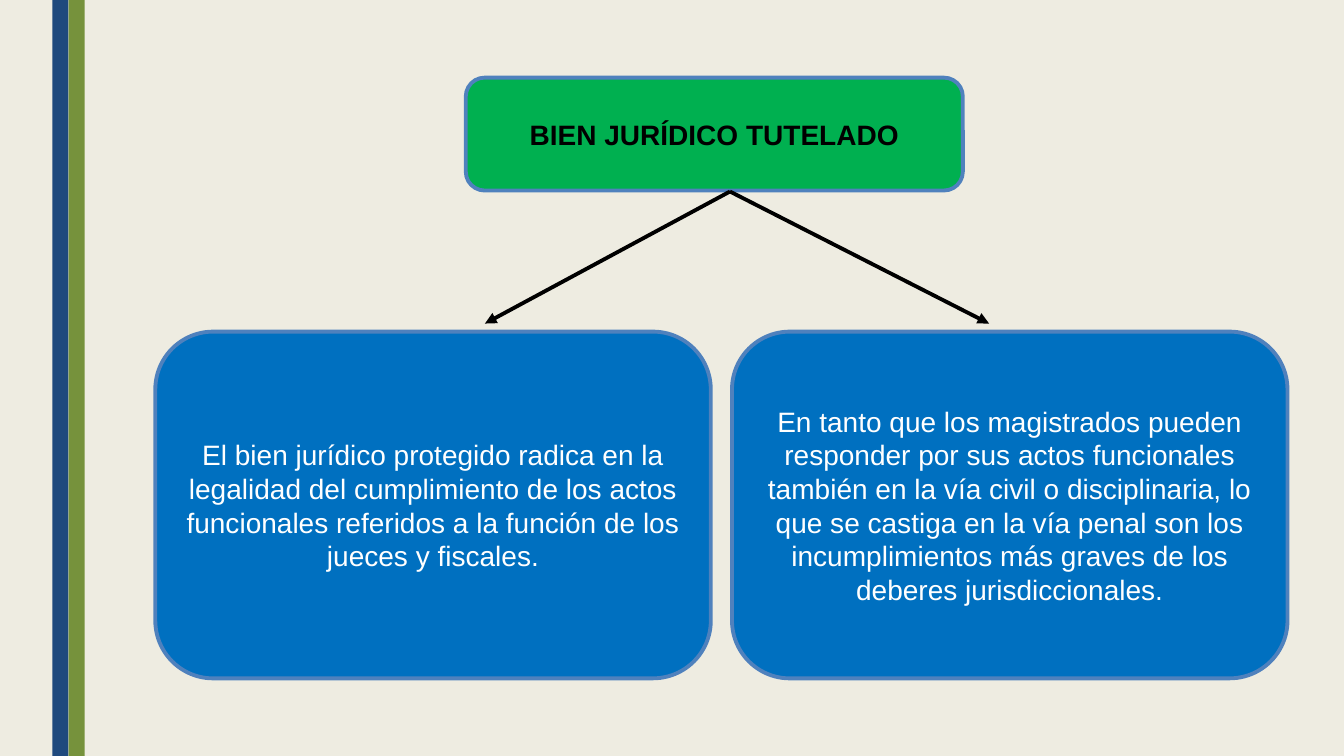
import lxml.etree
import pptx
import pptx.dml.color
import pptx.enum.shapes
import pptx.enum.text
import pptx.oxml.ns
import pptx.util

PX = 9144
SHAPE = pptx.enum.shapes.MSO_SHAPE
LINE_WIDTH = pptx.util.Pt(2.75)

TITLE = "BIEN JURÍDICO TUTELADO"
BRANCHES = [
    "El bien jurídico protegido radica en la legalidad del cumplimiento de los actos "
    "funcionales referidos a la función de los jueces y fiscales.",
    "En tanto que los magistrados pueden responder por sus actos funcionales también "
    "en la vía civil o disciplinaria, lo que se castiga en la vía penal son los "
    "incumplimientos más graves de los deberes jurisdiccionales.",
]


def px(*lengths):
    """Turn px lengths into EMU."""
    return [pptx.util.Emu(n * PX) for n in lengths]


def rgb(color):
    """Turn a hex string into a colour."""
    return pptx.dml.color.RGBColor.from_string(color)


def add_block(s, kind, box, fill):
    """Add a filled shape without outline or shadow."""
    sp = s.shapes.add_shape(kind, *px(*box))
    sp.shadow.inherit = False
    sp.fill.solid()
    sp.fill.fore_color.rgb = rgb(fill)
    sp.line.fill.background()
    return sp


def add_card(s, box, text, fill, color, bold=False):
    """Add a rounded card with centred text."""
    sp = add_block(s, SHAPE.ROUNDED_RECTANGLE, box, fill)
    sp.line.color.rgb = rgb("4F81BD")
    sp.line.width = LINE_WIDTH
    tf = sp.text_frame
    tf.word_wrap = True
    tf.vertical_anchor = pptx.enum.text.MSO_ANCHOR.MIDDLE
    p = tf.paragraphs[0]
    p.text = text
    p.alignment = pptx.enum.text.PP_ALIGN.CENTER
    p.font.name = "Arial"
    p.font.size = pptx.util.Pt(20)
    p.font.bold = bold
    p.font.color.rgb = rgb(color)


def add_arrow(s, start, end):
    """Add a black arrow from start to end."""
    cx = s.shapes.add_connector(
        pptx.enum.shapes.MSO_CONNECTOR.STRAIGHT, *px(*start, *end))
    cx.line.color.rgb = rgb("000000")
    cx.line.width = LINE_WIDTH
    qn = pptx.oxml.ns.qn
    lxml.etree.SubElement(cx.line._get_or_add_ln(), qn("a:tailEnd"), type="triangle")
    lxml.etree.SubElement(cx._element.spPr, qn("a:effectLst"))


def add_side_stripes(s, box):
    """Fill the box with two upright stripes of equal width."""
    x, y, w, h = box
    stripe = w // 2
    for i, fill in enumerate(["1F497D", "76923C"]):
        add_block(s, SHAPE.RECTANGLE, (x + i * stripe, y, stripe, h), fill)


def add_tree(s, box):
    """Place the title card, its two branch cards and the arrows in the box."""
    x, y, w, h = box
    title_h, card_w, card_h = 112, 551, 344
    add_card(s, (x + 308, y, 493, title_h), TITLE, "00B050", "000000", bold=True)
    for i, text in enumerate(BRANCHES):
        card = (x + i * (w - card_w), y + h - card_h, card_w, card_h)
        add_card(s, card, text, "0070C0", "FFFFFF")
    for tip in (327, 827):
        add_arrow(s, (x + 570, y + title_h + 1), (x + tip, y + h - card_h - 8))


def main():
    """Build and save the slide."""
    prs = pptx.Presentation()
    prs.slide_width, prs.slide_height = px(1333, 750)
    s = prs.slides.add_slide(prs.slide_layouts[6])
    s.background.fill.solid()
    s.background.fill.fore_color.rgb = rgb("EEECE1")
    add_side_stripes(s, (52, 0, 32, 750))
    add_tree(s, (154, 77, 1123, 596))
    prs.save("out.pptx")


if __name__ == "__main__":
    main()
